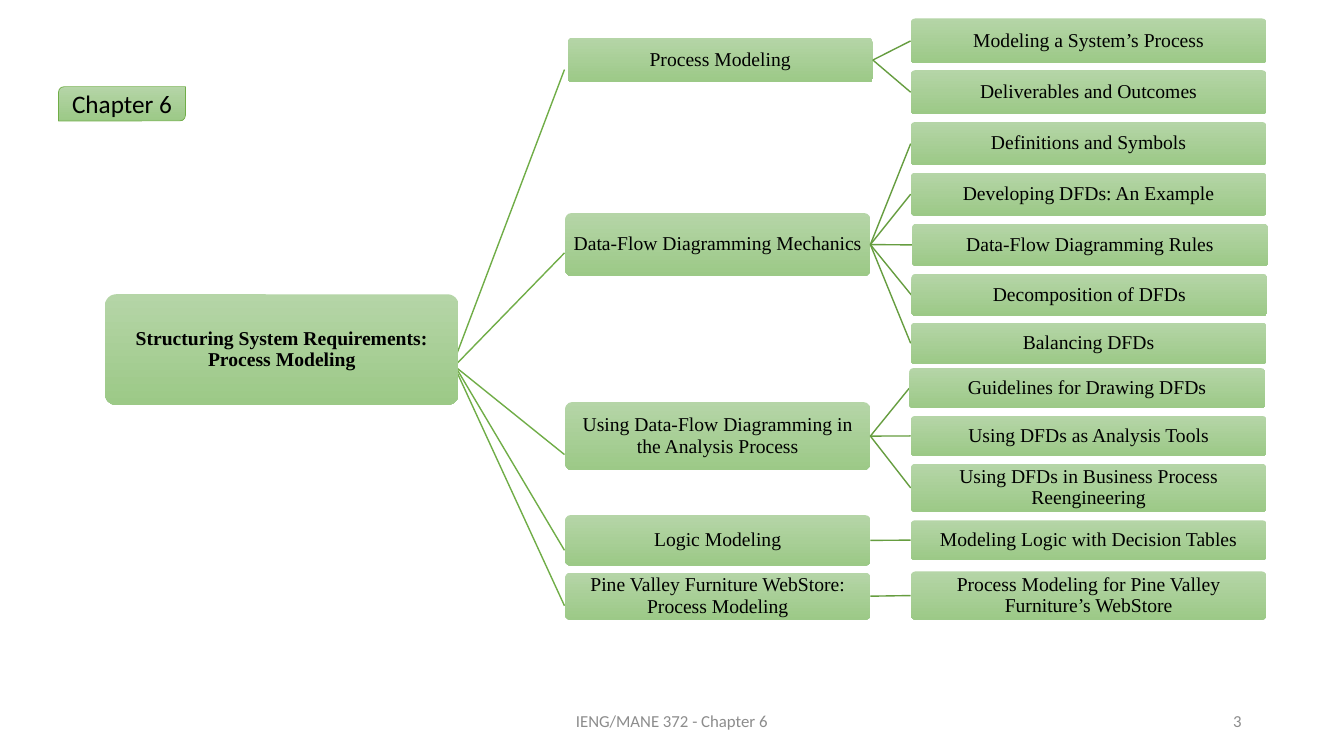
from lxml import etree
from pptx import Presentation
from pptx import util as u
from pptx.dml.color import RGBColor
from pptx.enum import shapes, text
from pptx.oxml.ns import qn

HUE = {"top": "B5D5A7", "low": "9CC987", "trunk": "70AD47",
       "twig": "669D40", "ink": "000000", "foot": "8C8C8C"}
SERIF, SANS = "Times New Roman", "Calibri"

ROOT = ("Structuring System Requirements: Process Modeling", 75, 210.2, 252.6, 79)
BADGE = ("Chapter 6", 41.8, 61.9, 90.7, 24.5)
FOOT = [("IENG/MANE 372 - Chapter 6", 318, 324, "CENTER"),
        ("3", 678, 216, "RIGHT")]

# topic: text, left, top, height, trunk start x, start y, end y, leaves
# leaf: text, left, top, height
TREE = [
    ("Process Modeling", 405.5, 26.9, 32, 322, 264.2, 49.7, [
        ("Modeling a System’s Process", 650.5, 13.2, 32),
        ("Deliverables and Outcomes", 650.5, 50.2, 31.4)]),
    ("Data-Flow Diagramming Mechanics", 403.7, 152.2, 45, 322, 264.2, 180.7, [
        ("Definitions and Symbols", 650.5, 87.2, 30.8),
        ("Developing DFDs: An Example", 650.5, 123.4, 30.6),
        ("Data-Flow Diagramming Rules", 651.5, 159.8, 30.3),
        ("Decomposition of DFDs", 651, 195.7, 30),
        ("Balancing DFDs", 650.5, 230.5, 29.5)]),
    ("Using Data-Flow Diagramming in the Analysis Process",
     403.7, 287.2, 48.6, 318.2, 256.3, 324.7, [
         ("Guidelines for Drawing DFDs", 649.5, 263, 28.6),
         ("Using DFDs as Analysis Tools", 650.5, 297.2, 28.4),
         ("Using DFDs in Business Process Reengineering", 650.5, 331.2, 34.6)]),
    ("Logic Modeling", 403.7, 368, 36, 322, 256.3, 393.1, [
        ("Modeling Logic with Decision Tables", 650.5, 371.7, 28.2)]),
    ("Pine Valley Furniture WebStore: Process Modeling",
     403.7, 409.1, 33.5, 322, 256.3, 432.7, [
         ("Process Modeling for Pine Valley Furniture’s WebStore",
          650.5, 408.2, 34.4)]),
]
TOPIC_W, LEAF_W = 218, 254.3

deck = Presentation()
deck.slide_width, deck.slide_height = u.Pt(960), u.Pt(540)
page = deck.slides.add_slide(deck.slide_layouts[6])


def rgb(name):
    return RGBColor.from_string(HUE[name])


def write(shape, words, size, font, hue="ink", bold=False, align="CENTER", pad=1.5):
    frame = shape.text_frame
    frame.word_wrap = True
    frame.vertical_anchor = text.MSO_ANCHOR.MIDDLE
    frame.margin_left = frame.margin_right = u.Pt(pad)
    frame.margin_top = frame.margin_bottom = u.Pt(pad)
    frame.text = words
    para = frame.paragraphs[0]
    para.alignment = getattr(text.PP_ALIGN, align)
    style = para.runs[0].font
    style.name, style.size, style.bold = font, u.Pt(size), bold
    style.color.rgb = rgb(hue)
    return para


def panel(kind, x, y, w, h):
    shape = page.shapes.add_shape(kind, u.Pt(x), u.Pt(y), u.Pt(w), u.Pt(h))
    shape.shadow.inherit = False
    shape.fill.gradient()
    shape.fill.gradient_angle = 270
    for stop, name in zip(shape.fill.gradient_stops, ("top", "low")):
        stop.color.rgb = rgb(name)
    return shape


def box(words, x, y, w, h, bold=False):
    shape = panel(shapes.MSO_SHAPE.ROUNDED_RECTANGLE, x, y, w, h)
    shape.adjustments[0] = 0.1
    shape.line.fill.background()
    write(shape, words, 14, SERIF, bold=bold).line_spacing = 0.9


def link(x1, y1, x2, y2, hue):
    line = page.shapes.add_connector(
        shapes.MSO_CONNECTOR.STRAIGHT, u.Pt(x1), u.Pt(y1), u.Pt(x2), u.Pt(y2))
    line.line.color.rgb = rgb(hue)
    line.line.width = u.Pt(1)
    etree.SubElement(line._element.spPr, qn("a:effectLst"))


for _, x, _, _, from_x, from_y, to_y, _ in TREE:
    link(from_x, from_y, 403.2, to_y, "trunk")

badge = panel(shapes.MSO_SHAPE.ROUND_2_DIAG_RECTANGLE, *BADGE[1:])
badge.line.color.rgb = rgb("trunk")
badge.line.width = u.Pt(0.5)
write(badge, BADGE[0], 18, SANS)

for words, x, y, h, _, _, _, leaves in TREE:
    box(words, x, y, TOPIC_W, h)
    for name, left, top, high in leaves:
        link(x + TOPIC_W, y + h / 2, left, top + high / 2, "twig")
        box(name, left, top, LEAF_W, high)

box(*ROOT, bold=True)

for words, x, w, align in FOOT:
    note = page.shapes.add_textbox(u.Pt(x), u.Pt(500.5), u.Pt(w), u.Pt(28.8))
    write(note, words, 12, SANS, "foot", align=align, pad=7.2)

deck.save("out.pptx")
